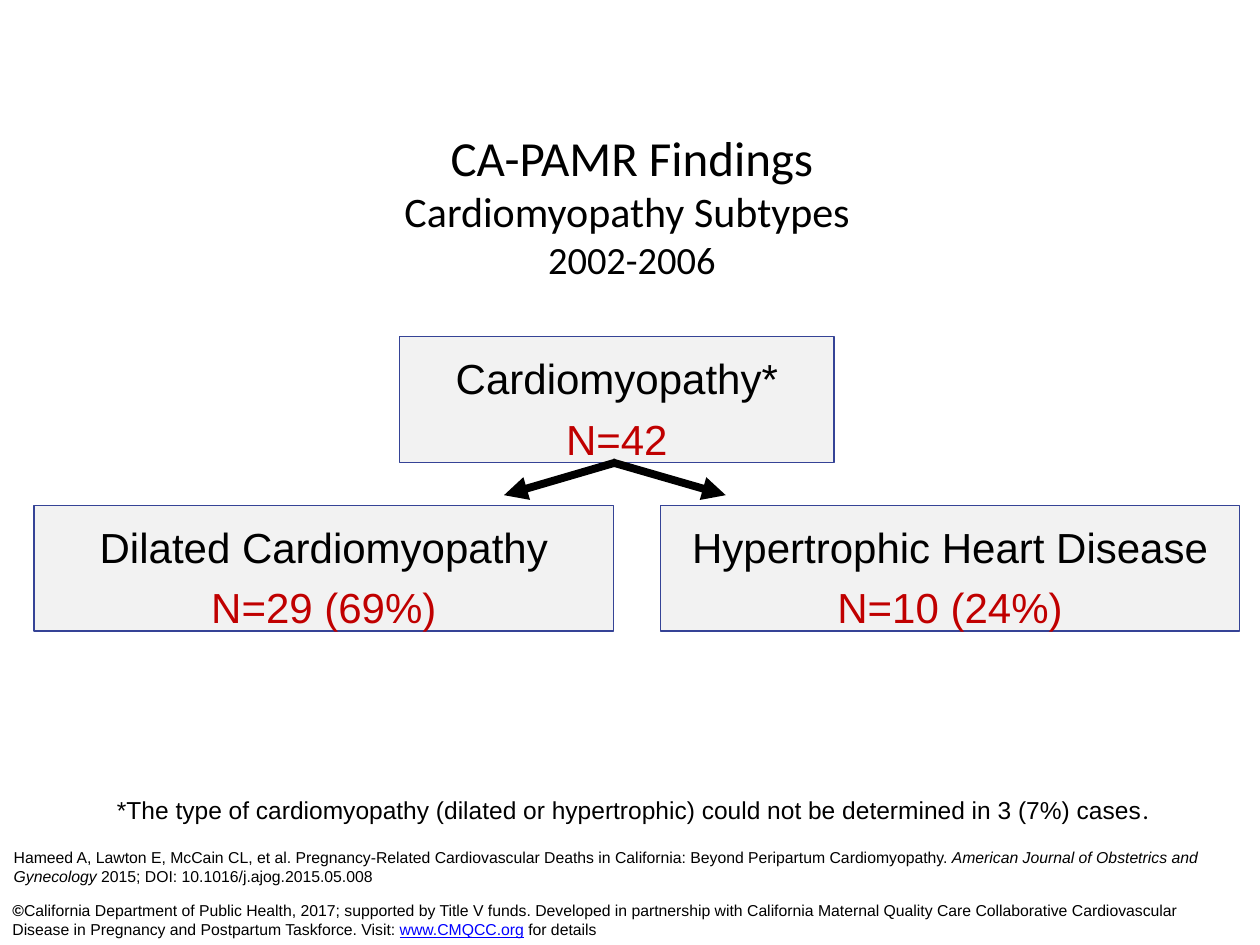
from lxml import etree
from pptx import Presentation
from pptx.dml.color import RGBColor
from pptx.enum.shapes import MSO_CONNECTOR as Connector, MSO_SHAPE as Shape
from pptx.enum.text import MSO_ANCHOR as Anchor, MSO_AUTO_SIZE as AutoSize, PP_ALIGN as Align
from pptx.oxml.ns import qn
from pptx.util import Inches, Pt

COLORS = {"text": "000000", "count": "C00000", "link": "0000FF",
          "box": "F2F2F2", "border": "354396"}


def rgb(name):
    return RGBColor.from_string(COLORS[name])


class FindingsSlide:
    body_font = "Arial"
    title_font = "Calibri"

    def __init__(self, prs):
        self.slide = prs.slides.add_slide(prs.slide_layouts[5])

    def style(self, font, size, face=body_font, color="text"):
        font.name = face
        font.size = Pt(size)
        font.color.rgb = rgb(color)

    def place(self, shape, left, top, width, height):
        shape.left, shape.top = Inches(left), Inches(top)
        shape.width, shape.height = Inches(width), Inches(height)

    def title(self, lines, *box):
        """Set the title from (text, size) lines."""
        title = self.slide.shapes.title
        self.place(title, *box)
        frame = title.text_frame
        frame.auto_size = AutoSize.NONE
        frame.vertical_anchor = Anchor.MIDDLE
        heading = frame.paragraphs[0]
        heading.alignment = Align.CENTER
        for i, (text, size) in enumerate(lines):
            if i:
                heading.add_line_break()
            run = heading.add_run()
            run.text = text
            self.style(run.font, size, self.title_font)

    def note(self, parts, size, *box):
        """Add a one-paragraph note from (text, font settings) parts."""
        note = self.slide.shapes.add_textbox(*map(Inches, box))
        frame = note.text_frame
        frame.word_wrap = True
        paragraph = frame.paragraphs[0]
        self.style(paragraph.font, size)
        for text, settings in parts:
            run = paragraph.add_run()
            run.text = text
            self.style(run.font, size, settings.get("face", self.body_font),
                       settings.get("color", "text"))
            run.font.bold = settings.get("bold")
            run.font.italic = settings.get("italic")
            run.font.underline = settings.get("underline")

    def group_box(self, label, count, *box):
        """Add a patient group with its count in red."""
        group = self.slide.shapes.add_shape(Shape.RECTANGLE, *map(Inches, box))
        group.shadow.inherit = False
        group.fill.solid()
        group.fill.fore_color.rgb = rgb("box")
        group.line.color.rgb = rgb("border")
        group.line.width = Pt(0.75)
        frame = group.text_frame
        frame.word_wrap = True
        frame.vertical_anchor = Anchor.TOP
        frame.text = f"{label}\n{count}"
        for paragraph, color in zip(frame.paragraphs, ("text", "count")):
            paragraph.alignment = Align.CENTER
            paragraph.line_spacing = 1.2
            self.style(paragraph.font, 24, color=color)

    def arrow(self, *ends):
        arrow = self.slide.shapes.add_connector(Connector.STRAIGHT, *map(Inches, ends))
        arrow.line.color.rgb = rgb("text")
        arrow.line.width = Pt(4.5)
        etree.SubElement(arrow.line._get_or_add_ln(), qn("a:tailEnd"), type="triangle")
        etree.SubElement(arrow._element.spPr, qn("a:effectLst"))


def main():
    prs = Presentation()
    prs.slide_width, prs.slide_height = Inches(10), Inches(7.5)
    findings = FindingsSlide(prs)

    # Title
    findings.title([("CA-PAMR Findings", 28), ("Cardiomyopathy Subtypes ", 24),
                    ("2002-2006", 22)], 0.38, 1.21, 9.27, 0.83)

    # All cases and the two subtypes
    findings.group_box("Cardiomyopathy*", "N=42", 3.17, 2.67, 3.45, 1)
    subtypes = [("Dilated Cardiomyopathy", "N=29 (69%)", 0.27),
                ("Hypertrophic Heart Disease", "N=10 (24%)", 5.24)]
    for label, count, left in subtypes:
        findings.group_box(label, count, left, 4.01, 4.6, 1)

    # Arrows to the subtypes
    for start, end in [(4.89, 4), (4.86, 5.76)]:
        findings.arrow(start, 3.67, end, 3.93)

    # Footnote
    findings.note([
        ("*The type of cardiomyopathy (dilated or hypertrophic) could not be "
         "determined in 3 (7%) cases", {}),
        (".", {"face": findings.title_font}),
    ], 14, 0.83, 6.26, 9.4, 0.34)

    # Citation
    findings.note([
        ("Hameed A, Lawton E, McCain CL, et al. Pregnancy-Related Cardiovascular "
         "Deaths in California: Beyond Peripartum Cardiomyopathy. ", {}),
        ("American Journal of Obstetrics and Gynecology", {"italic": True}),
        (" 2015; DOI: 10.1016/j.ajog.2015.05.008", {}),
    ], 9, 0.01, 6.68, 9.68, 0.4)

    # Copyright
    findings.note([
        ("©", {"bold": True}),
        ("California Department of Public Health, 2017; supported by Title V funds. "
         "Developed in partnership with California Maternal Quality Care Collaborative "
         "Cardiovascular Disease in Pregnancy and Postpartum Taskforce. Visit: ", {}),
        ("www.CMQCC.org", {"color": "link", "underline": True}),
        (" for details", {}),
    ], 9, 0, 7.1, 9.85, 0.4)

    prs.save("out.pptx")


if __name__ == "__main__":
    main()
